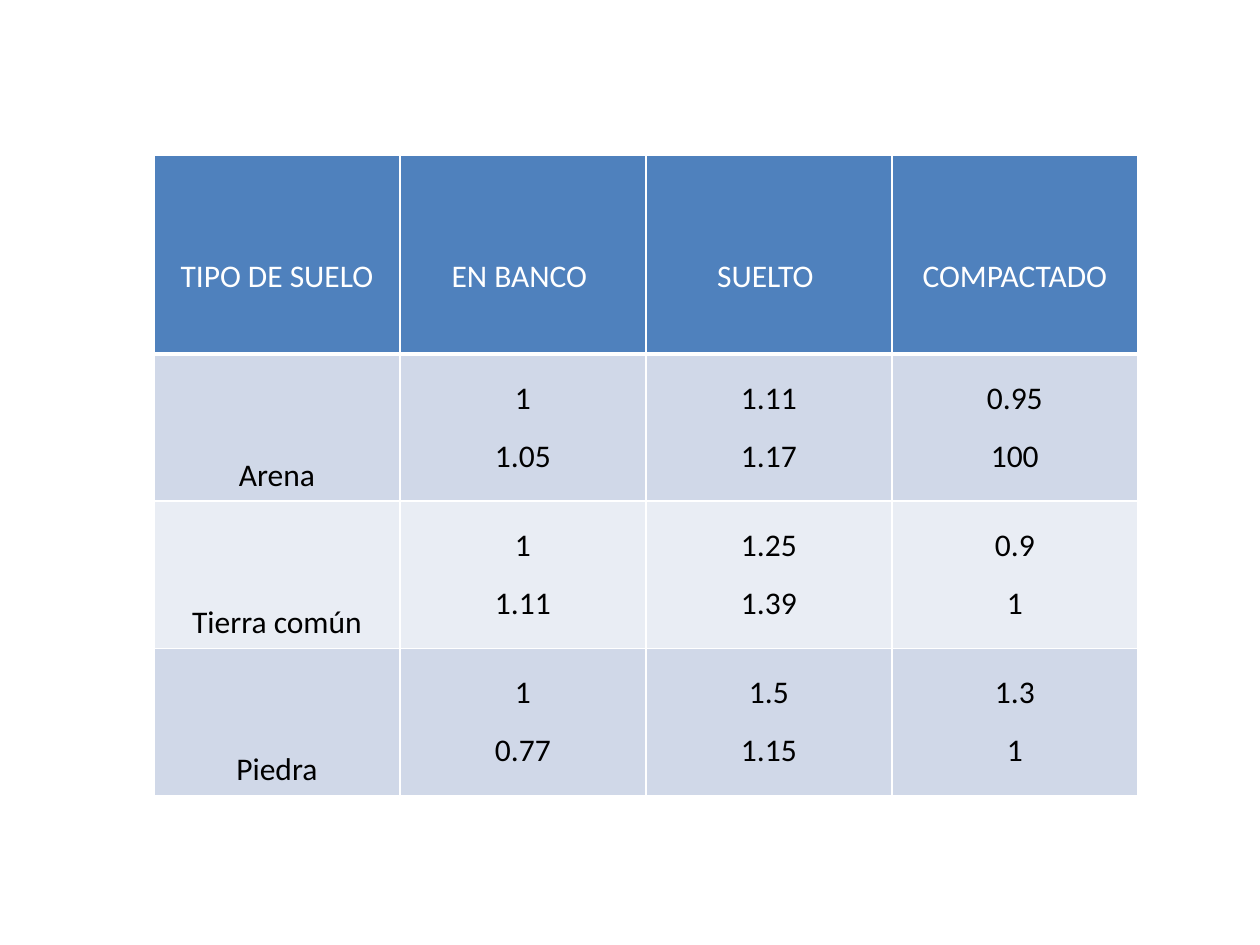
from lxml import etree
from pptx import Presentation
from pptx.dml.color import RGBColor
from pptx.enum.text import MSO_ANCHOR, PP_ALIGN
from pptx.oxml.ns import qn
from pptx.util import Pt

CENTER = PP_ALIGN.CENTER
TOP = MSO_ANCHOR.TOP
PX = 914400 // 126

COLUMN_WIDTH = 246
HEADER_HEIGHT = 199
ROW_HEIGHT = 147
HEADER_FILL = "4F81BD"
BAND_FILLS = ["D0D8E8", "E9EDF4"]
ROWS = [
    [["TIPO DE SUELO"], ["EN BANCO "], ["SUELTO "], ["COMPACTADO"]],
    [["Arena"], ["1", "1.05"], ["1.11", "1.17"], ["0.95", "100"]],
    [["Tierra común"], ["1", "1.11"], ["1.25", "1.39"], ["0.9", "1"]],
    [["Piedra"], ["1", "0.77"], ["1.5", "1.15"], ["1.3", "1"]],
]


def color(value):
    return RGBColor.from_string(value)


def add_border(cell, side, points):
    properties = cell._tc.get_or_add_tcPr()
    line = etree.SubElement(properties, qn(f"a:ln{side}"), w=str(Pt(points)))
    fill = etree.SubElement(line, qn("a:solidFill"))
    etree.SubElement(fill, qn("a:srgbClr"), val="FFFFFF")


presentation = Presentation()
presentation.slide_width = 1260 * PX
presentation.slide_height = 945 * PX
slide = presentation.slides.add_slide(presentation.slide_layouts[6])

table = slide.shapes.add_table(
    len(ROWS), len(ROWS[0]), 154 * PX, 155 * PX,
    len(ROWS[0]) * COLUMN_WIDTH * PX, (HEADER_HEIGHT + 3 * ROW_HEIGHT) * PX,
).table
table.first_row = False
table.horz_banding = False
for column in table.columns:
    column.width = COLUMN_WIDTH * PX

for row_index, row in enumerate(ROWS):
    is_header = row_index == 0
    table.rows[row_index].height = (HEADER_HEIGHT if is_header else ROW_HEIGHT) * PX
    fill_color = HEADER_FILL if is_header else BAND_FILLS[(row_index - 1) % 2]
    for column_index, lines in enumerate(row):
        cell = table.cell(row_index, column_index)
        cell.vertical_anchor = TOP
        for side in "LRTB":
            add_border(cell, side, 3 if is_header and side == "B" else 1)
        cell.fill.solid()
        cell.fill.fore_color.rgb = color(fill_color)
        for line_index, text in enumerate(lines):
            text_frame = cell.text_frame
            paragraph = text_frame.add_paragraph() if line_index else text_frame.paragraphs[0]
            paragraph.alignment = CENTER
            paragraph.line_spacing = 3.5 if len(lines) == 1 else 1.5
            run = paragraph.add_run()
            run.text = text
            run.font.name = "Calibri"
            run.font.size = Pt(18)
            run.font.color.rgb = color("FFFFFF" if is_header else "000000")

presentation.save("out.pptx")
